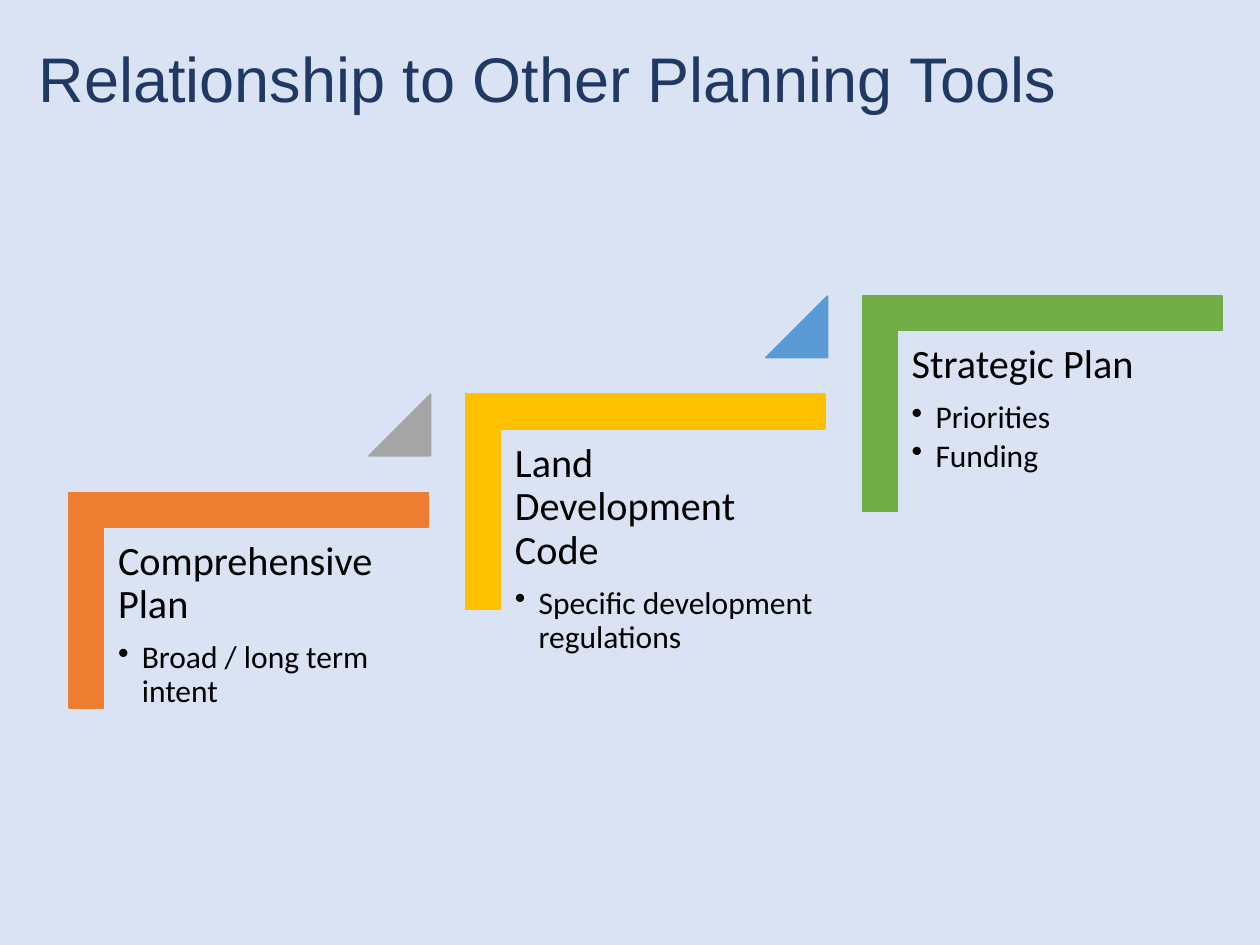
"""Build a slide of three rising steps that link planning tools."""
from lxml import etree
from pptx import Presentation
from pptx.dml.color import RGBColor
from pptx.enum.shapes import MSO_SHAPE
from pptx.enum.text import MSO_ANCHOR, MSO_AUTO_SIZE, PP_ALIGN
from pptx.oxml.ns import qn
from pptx.util import Cm, Pt

CORNER, WEDGE = MSO_SHAPE.CORNER, MSO_SHAPE.ISOSCELES_TRIANGLE
TOP, LEFT, GROW = MSO_ANCHOR.TOP, PP_ALIGN.LEFT, MSO_AUTO_SIZE.SHAPE_TO_FIT_TEXT

TITLE = "Relationship to Other Planning Tools"
STEPS = [
    ("Comprehensive Plan", ["Broad / long term intent"], "ED7D31", "A5A5A5"),
    ("Land Development Code", ["Specific development regulations"], "FFC000", "5B9BD5"),
    ("Strategic Plan", ["Priorities", "Funding"], "70AD47", None),
]
THEME = {
    "back": "DAE3F3", "title": "203864", "text": "000000",
    "title font": "Arial", "font": "Calibri",
    "title size": 36, "head size": 23, "item size": 18,
}
RUN, RISE = 8.0, 1.98
BAR = (2.84, 8.48, 4.34, 7.24)
TEXT = (2.13, 10.65, 6.53, 5.72)
TIP = (7.44, 7.95, 1.24, 1.24)
INSET, INDENT = 0.25, 0.48


def place(box, step):
    x, y, w, h = box
    return [Cm(v) for v in (x + step * RUN, y - step * RISE, w, h)]


def write(para, text, font, size, color):
    run = para.add_run()
    run.text = text
    run.font.name = font
    run.font.size = Pt(size)
    run.font.color.rgb = RGBColor.from_string(color)


def draw(group, kind, box, color, *adjust):
    shape = group.shapes.add_shape(kind, *box)
    for i, value in enumerate(adjust):
        shape.adjustments[i] = value
    shape.shadow.inherit = False
    shape.fill.solid()
    shape.fill.fore_color.rgb = RGBColor.from_string(color)
    shape.line.color.rgb = RGBColor.from_string(color)
    shape.line.width = Pt(1)
    return shape


def add_text(group, box, head, items):
    frame = group.shapes.add_textbox(*box).text_frame
    frame.word_wrap = True
    frame.margin_left = frame.margin_right = Cm(INSET)
    frame.margin_top = frame.margin_bottom = Cm(INSET)
    para = frame.paragraphs[0]
    para.line_spacing, para.space_after = 0.9, Pt(8)
    write(para, head, THEME["font"], THEME["head size"], THEME["text"])
    for item in items:
        para = frame.add_paragraph()
        para.level = 1
        para.line_spacing, para.space_after = 0.9, Pt(2.7)
        props = para._p.get_or_add_pPr()
        props.set("marL", str(Cm(INDENT)))
        props.set("indent", str(-Cm(INDENT)))
        etree.SubElement(props, qn("a:buChar")).set("char", "•")
        write(para, item, THEME["font"], THEME["item size"], THEME["text"])


def add_title(slide):
    title = slide.shapes.title
    title.left, title.top, title.width, title.height = map(Cm, (0.53, 0.66, 23.72, 1.8))
    frame = title.text_frame
    frame.word_wrap, frame.auto_size, frame.vertical_anchor = True, GROW, TOP
    para = frame.paragraphs[0]
    para.alignment = LEFT
    write(para, TITLE, THEME["title font"], THEME["title size"], THEME["title"])


def main():
    deck = Presentation()
    deck.slide_width, deck.slide_height = Cm(25.4), Cm(19.05)
    slide = deck.slides.add_slide(deck.slide_layouts[5])
    slide.background.fill.solid()
    slide.background.fill.fore_color.rgb = RGBColor.from_string(THEME["back"])
    add_title(slide)
    group = slide.shapes.add_group_shape()
    for step, (head, items, color, tip) in enumerate(STEPS):
        bar = draw(group, CORNER, place(BAR, step), color, 0.16, 0.16)
        bar.rotation = 90
        add_text(group, place(TEXT, step), head, items)
        if tip:
            draw(group, WEDGE, place(TIP, step), tip, 1)
    deck.save("out.pptx")


if __name__ == "__main__":
    main()
